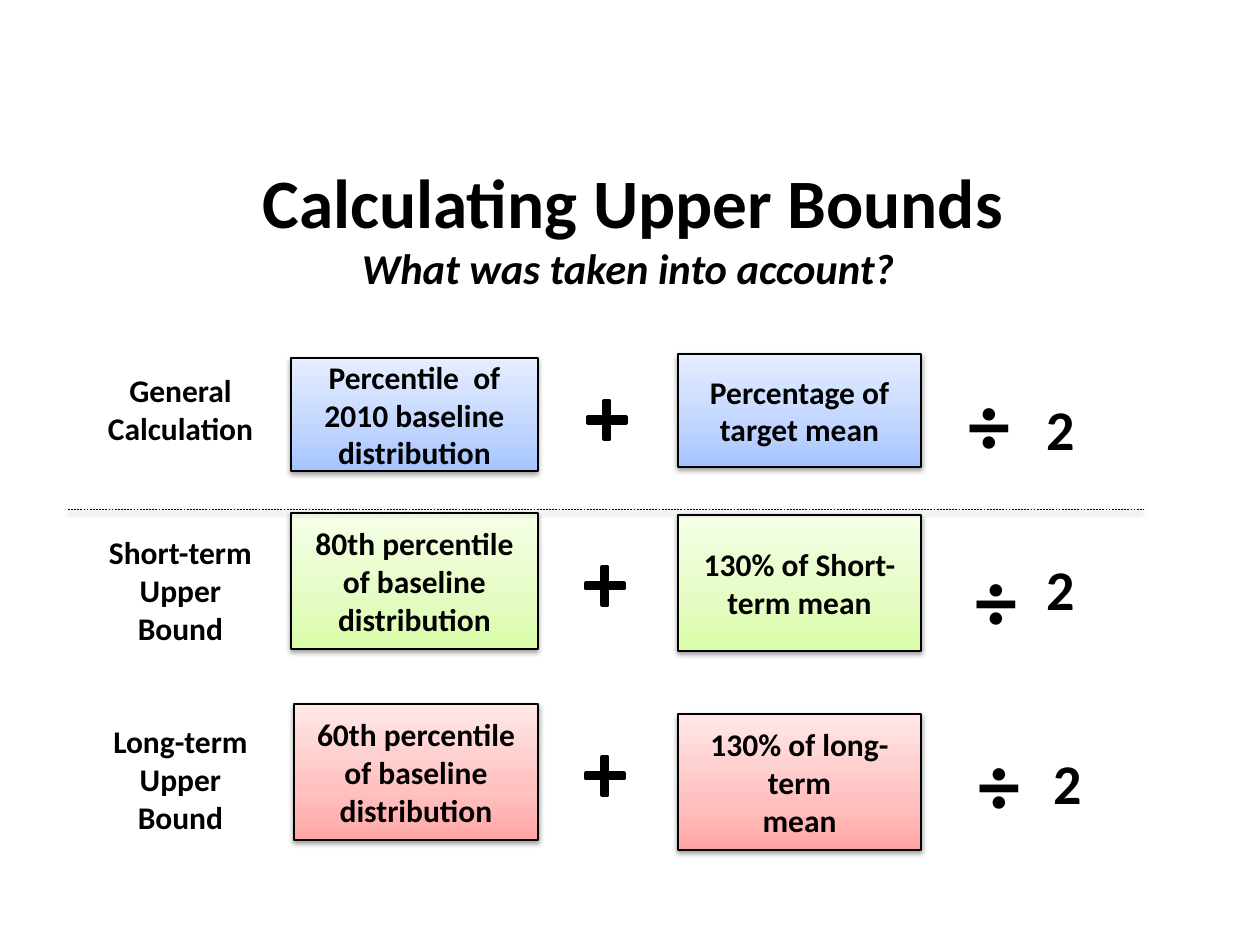
from lxml import etree
from pptx import Presentation
from pptx.dml.color import RGBColor
from pptx.enum.dml import MSO_LINE
from pptx.enum.shapes import MSO_CONNECTOR, MSO_SHAPE
from pptx.enum.text import MSO_ANCHOR, MSO_AUTO_SIZE, PP_ALIGN
from pptx.oxml.ns import qn
from pptx.util import Pt

RECTANGLE, ROUNDED, PLUS = MSO_SHAPE.RECTANGLE, MSO_SHAPE.ROUNDED_RECTANGLE, MSO_SHAPE.CROSS
STRAIGHT, DASH = MSO_CONNECTOR.STRAIGHT, MSO_LINE.DASH
TOP, MIDDLE = MSO_ANCHOR.TOP, MSO_ANCHOR.MIDDLE
LEFT, CENTER = PP_ALIGN.LEFT, PP_ALIGN.CENTER
NO_FIT, GROW = MSO_AUTO_SIZE.NONE, MSO_AUTO_SIZE.SHAPE_TO_FIT_TEXT

BLACK = RGBColor(0x00, 0x00, 0x00)
WHITE = RGBColor(0xFF, 0xFF, 0xFF)
BLUES = RGBColor(0xA4, 0xC4, 0xFF), RGBColor(0xBF, 0xD4, 0xFF), RGBColor(0xE6, 0xEE, 0xFF)
GREENS = RGBColor(0xDA, 0xFD, 0xA7), RGBColor(0xE4, 0xFC, 0xC2), RGBColor(0xF5, 0xFF, 0xE7)
REDS = RGBColor(0xFF, 0xA6, 0xA5), RGBColor(0xFF, 0xC0, 0xBF), RGBColor(0xFF, 0xE7, 0xE7)
STOPS = 0, 35, 100
FONT = "Calibri"

# Each row: its box, then parts placed relative to that box
ROWS = [
    {"box": (86, 354, 1032, 117), "colors": BLUES,
     "label": ("General Calculation", (0, 11, 189, 89)), "label_shape": None,
     "terms": [(["Percentile  of 2010 baseline distribution"], (205, 4, 247, 113)),
               (["Percentage of target mean"], (592, 0, 243, 113))],
     "plus": (502, 47), "divide": (870, 11), "two": (948, 34)},
    {"box": (86, 513, 1032, 140), "colors": GREENS,
     "label": ("Short-term Upper Bound", (0, 14, 189, 126)), "label_shape": ROUNDED,
     "terms": [(["80th percentile of baseline distribution"], (205, 0, 247, 136)),
               (["130% of Short-term mean"], (592, 2, 243, 136))],
     "plus": (500, 54), "divide": (877, 28), "two": (948, 35)},
    {"box": (86, 704, 1032, 146), "colors": REDS,
     "label": ("Long-term Upper Bound", (0, 12, 189, 126)), "label_shape": ROUNDED,
     "terms": [(["60th percentile of baseline distribution"], (208, 0, 244, 136)),
               (["130% of long-term", "mean"], (592, 10, 243, 136))],
     "plus": (500, 53), "divide": (880, 21), "two": (955, 38)},
]


def px(length):
    return round(length * 914400 / 126)


def place(origin, part):
    """Turn a part's box, relative to its origin, into EMU."""
    left, top, width, height = part
    return px(origin[0] + left), px(origin[1] + top), px(width), px(height)


def add_span(para, text, size, italic=False):
    span = para.add_run()
    span.text = text
    span.font.name, span.font.size = FONT, Pt(size)
    span.font.bold, span.font.italic = True, italic
    span.font.color.rgb = BLACK


def write(shape, texts, size, align=CENTER, anchor=MIDDLE, wrap=True):
    frame = shape.text_frame
    frame.word_wrap, frame.vertical_anchor = wrap, anchor
    for index, text in enumerate(texts):
        para = frame.add_paragraph() if index else frame.paragraphs[0]
        para.alignment = align
        add_span(para, text, size)


def cast_shadow(part):
    properties = part._element.spPr
    effects = etree.SubElement(properties, qn("a:effectLst"))
    shadow = etree.SubElement(effects, qn("a:outerShdw"), blurRad=str(Pt(3.1)),
                              dist=str(Pt(1.6)), dir="5400000", rotWithShape="0")
    color = etree.SubElement(shadow, qn("a:srgbClr"), val=str(BLACK))
    etree.SubElement(color, qn("a:alpha"), val="38000")


def fill_gradient(shape, colors):
    shape.fill.gradient()
    shape.fill.gradient_angle = 90
    stop_list = shape._element.spPr.find(".//" + qn("a:gsLst"))
    for stop in list(stop_list):
        stop_list.remove(stop)
    for position, color in zip(STOPS, colors):
        stop = etree.SubElement(stop_list, qn("a:gs"), pos=str(position * 1000))
        etree.SubElement(stop, qn("a:srgbClr"), val=str(color))


def add_title(page, box):
    title = page.shapes.title
    title.left, title.top, title.width, title.height = place((0, 0), box)
    frame = title.text_frame
    frame.word_wrap, frame.auto_size, frame.vertical_anchor = True, NO_FIT, MIDDLE
    para = frame.paragraphs[0]
    para.alignment = CENTER
    add_span(para, "Calculating Upper Bounds", 39.6)
    para.add_line_break()
    add_span(para, "What was taken into account? ", 24.3, italic=True)


def add_label(page, box, row):
    text, part = row["label"]
    if row["label_shape"] is None:
        label = page.shapes.add_textbox(*place(box, part))
        write(label, [text], 18, anchor=TOP)
        label.text_frame.auto_size = GROW
        return
    label = page.shapes.add_shape(row["label_shape"], *place(box, part))
    label.shadow.inherit = False
    label.fill.solid()
    label.fill.fore_color.rgb = WHITE
    label.line.fill.background()
    write(label, [text], 18)


def add_term(page, box, part, texts, colors):
    term = page.shapes.add_shape(RECTANGLE, *place(box, part))
    fill_gradient(term, colors)
    term.line.color.rgb, term.line.width = BLACK, Pt(0.75)
    cast_shadow(term)
    write(term, texts, 18)


def add_plus(page, box, part):
    plus = page.shapes.add_shape(PLUS, *place(box, part))
    plus.shadow.inherit = False
    plus.adjustments[0] = 0.426
    plus.fill.solid()
    plus.fill.fore_color.rgb = BLACK
    plus.line.color.rgb, plus.line.width = BLACK, Pt(2)


def add_symbol(page, box, part, text, size, wrap):
    symbol = page.shapes.add_textbox(*place(box, part))
    write(symbol, [text], size, LEFT, TOP, wrap)
    symbol.text_frame.auto_size = GROW


def add_row(page, box, row):
    add_label(page, box, row)
    for texts, part in row["terms"]:
        add_term(page, box, part, texts, row["colors"])
    add_plus(page, box, (*row["plus"], 38, 38))
    add_symbol(page, box, (*row["divide"], 68, 115), "÷", 48, wrap=False)
    add_symbol(page, box, (*row["two"], 84, 81), "2", 32, wrap=True)


def add_divider(page, left, right, top):
    divider = page.shapes.add_connector(STRAIGHT, px(left), px(top), px(right), px(top))
    divider.line.color.rgb, divider.line.width = BLACK, Pt(0.25)
    divider.line.dash_style = DASH
    cast_shadow(divider)


def main():
    deck = Presentation()
    deck.slide_width, deck.slide_height = px(1260), px(945)
    page = deck.slides.add_slide(deck.slide_layouts[5])
    add_title(page, (66, 147, 1134, 158))
    for row in ROWS:
        add_row(page, row["box"], row)
    add_divider(page, 68, 1144, 509)
    deck.save("out.pptx")


if __name__ == "__main__":
    main()
